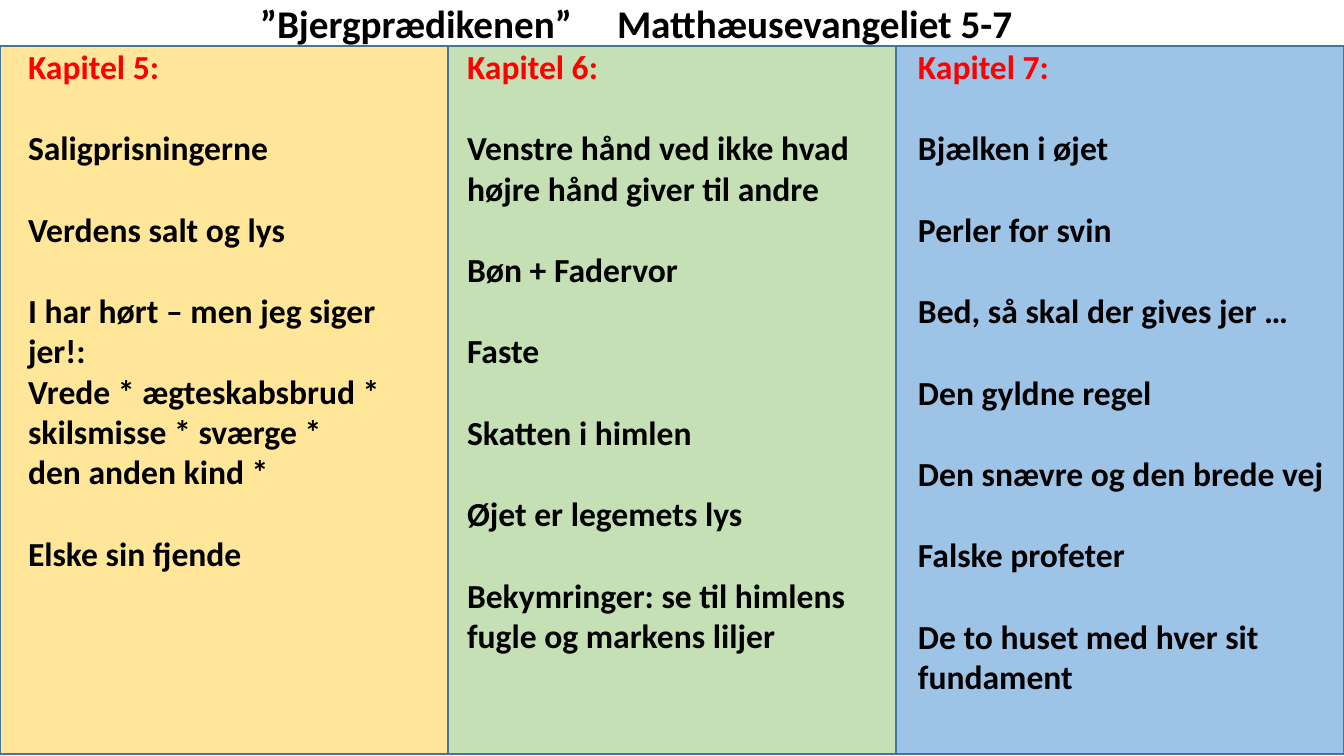
from lxml import etree
from pptx import Presentation
from pptx.dml.color import RGBColor
from pptx.enum import text
from pptx.oxml import ns
from pptx.util import Emu, Pt

RED = RGBColor(0xFF, 0x00, 0x00)
BLACK = RGBColor(0x00, 0x00, 0x00)
EDGE = RGBColor(0x43, 0x73, 0x9E)
YELLOW = RGBColor(0xFF, 0xE6, 0x99)
GREEN = RGBColor(0xC5, 0xE0, 0xB4)
BLUE = RGBColor(0x9D, 0xC3, 0xE6)

WIDE, HIGH = 1344, 756
COL, TOP, TALL = WIDE // 3, 46, 708
GAP = Pt(29.3)  # one line of 24 pt text


def px(n):
    return Emu(round(n * 914400 / 100.8))


def style(para, size, color):
    para.alignment = text.PP_ALIGN.LEFT
    font = para.font
    font.name, font.size, font.bold = "Calibri", Pt(size), True
    font.color.rgb = color


# fill, left inset, right inset, heading, groups of lines
CHAPTERS = [
    (YELLOW, 28, 10, "Kapitel 5:", [
        ["Saligprisningerne"],
        ["Verdens salt og lys"],
        ["I har hørt – men jeg siger jer!:", "Vrede * ægteskabsbrud *",
         "skilsmisse * sværge *", "den anden kind *"],
        ["Elske sin fjende"]]),
    (GREEN, 19, 19, "Kapitel 6:", [
        ["Venstre hånd ved ikke hvad højre hånd giver til andre"],
        ["Bøn + Fadervor"],
        ["Faste"],
        ["Skatten i himlen"],
        ["Øjet er legemets lys"],
        ["Bekymringer: se til himlens fugle og markens liljer"]]),
    (BLUE, 22, 16, "Kapitel 7:", [
        ["Bjælken i øjet"],
        ["Perler for svin"],
        ["Bed, så skal der gives jer …"],
        ["Den gyldne regel"],
        ["Den snævre og den brede vej"],
        ["Falske profeter"],
        ["De to huset med hver sit fundament"]]),
]

deck = Presentation()
deck.slide_width, deck.slide_height = px(WIDE), px(HIGH)
slide = deck.slides.add_slide(deck.slide_layouts[4])
spare = slide.placeholders[4].element
spare.getparent().remove(spare)

# Title, its two halves set apart by a tab stop
title = slide.shapes.title
title.left, title.top, title.width, title.height = px(250), px(-6), px(782), px(57)
frame = title.text_frame
frame.text = "”Bjergprædikenen”\tMatthæusevangeliet 5-7"
frame.auto_size = text.MSO_AUTO_SIZE.NONE
frame.word_wrap = False
frame.margin_left = frame.margin_right = px(10)
para = frame.paragraphs[0]
props = para._p.get_or_add_pPr()
tabs = etree.SubElement(props, ns.qn("a:tabLst"))
etree.SubElement(tabs, ns.qn("a:tab"), pos=str(px(357)), algn="l")
style(para, 28, BLACK)

# One filled column per chapter
for i, (fill, left, right, head, groups) in enumerate(CHAPTERS):
    body = slide.placeholders[i + 1]
    body.left, body.top, body.width, body.height = px(i * COL), px(TOP), px(COL), px(TALL)
    body.fill.solid()
    body.fill.fore_color.rgb = fill
    body.line.color.rgb = EDGE
    body.line.width = Pt(1)

    frame = body.text_frame
    frame.auto_size = text.MSO_AUTO_SIZE.NONE
    frame.vertical_anchor = text.MSO_ANCHOR.TOP
    frame.word_wrap = True
    frame.margin_left, frame.margin_right = px(left), px(right)
    frame.margin_top = frame.margin_bottom = 0

    rows = [(head, 0, RED)]
    for group in groups:
        rows += [(line, 0 if n else GAP, BLACK) for n, line in enumerate(group)]
    frame.text = "\n".join(row[0] for row in rows)
    for para, (_, gap, color) in zip(frame.paragraphs, rows):
        props = para._p.get_or_add_pPr()
        props.set("marL", "0")
        props.set("indent", "0")
        etree.SubElement(props, ns.qn("a:buNone"))
        para.space_before = gap
        style(para, 24, color)

deck.save("out.pptx")
